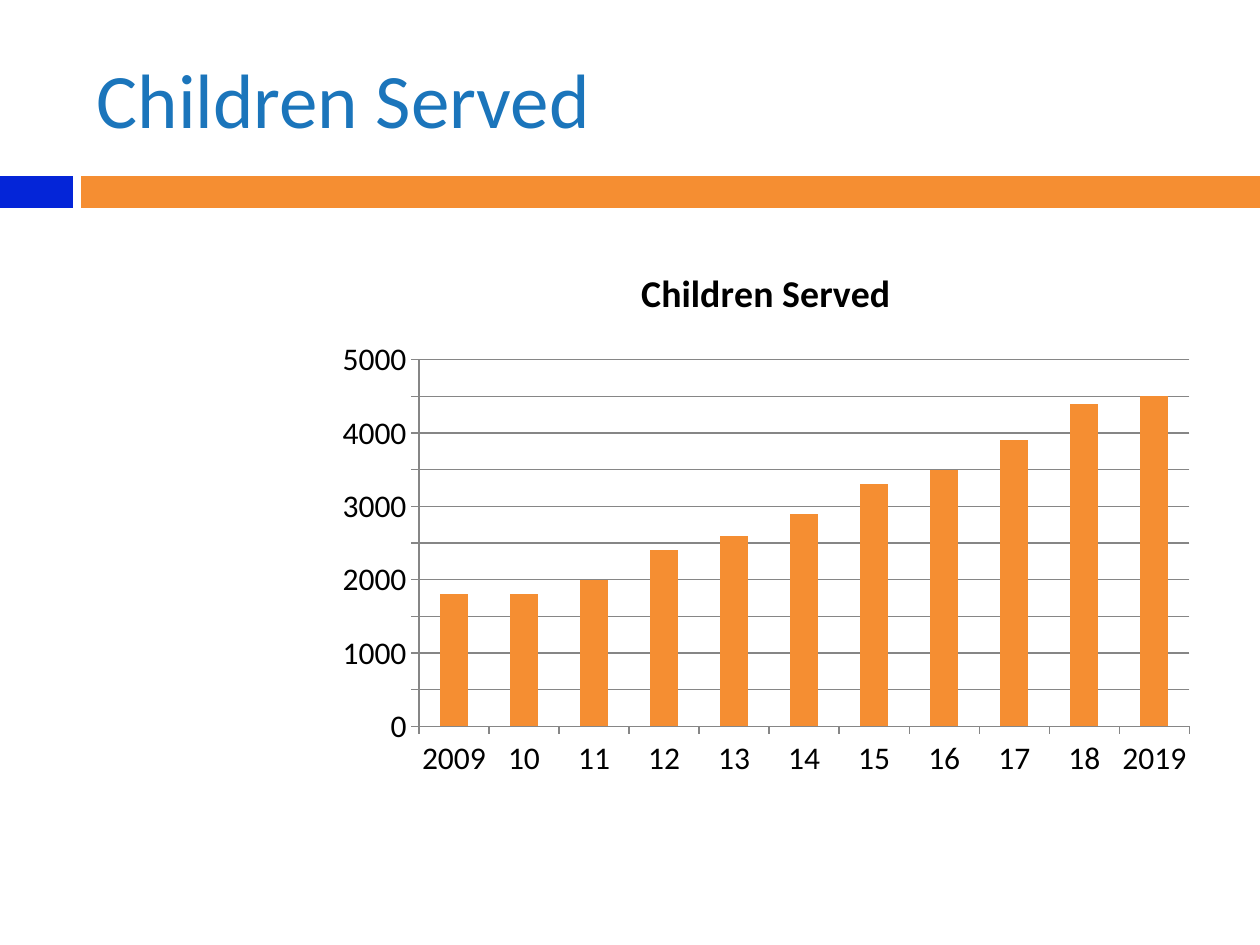
from pptx import Presentation
from pptx import util as u
from pptx.chart.data import CategoryChartData
from pptx.dml.color import RGBColor
from pptx.enum import chart as charts, shapes, text

# Content
HEADING = "Children Served"
SERVED = {
    "2009": 1800, "10": 1800, "11": 2000, "12": 2400, "13": 2600, "14": 2900,
    "15": 3300, "16": 3500, "17": 3900, "18": 4400, "2019": 4500,
}

# Style and places in px: left, top, width, height
FONT = "Calibri"
BLUE, ORANGE, TITLE_BLUE = "0425D8", "F58E32", "1B75BB"
BLACK, GREY = "000000", "868686"
PX = u.Inches(1) / 126
SLIDE_SIZE = (1260, 945)
TITLE_BOX = (84, 38, 1113, 120)
CHART_BOX = (325, 242, 882, 546)
BANDS = [((0, 176, 73, 32), BLUE), ((81, 176, 1179, 32), ORANGE)]


def emu(lengths):
    return [round(length * PX) for length in lengths]


def color(value):
    return RGBColor.from_string(value)


def style_font(font, size, value, bold=False):
    font.name, font.size, font.bold = FONT, u.Pt(size), bold
    font.color.rgb = color(value)


def style_line(line):
    line.color.rgb = color(GREY)
    line.width = u.Pt(0.75)


presentation = Presentation()
presentation.slide_width, presentation.slide_height = emu(SLIDE_SIZE)
slide = presentation.slides.add_slide(presentation.slide_layouts[5])

# Bands under the title
for box, fill in BANDS:
    band = slide.shapes.add_shape(shapes.MSO_SHAPE.RECTANGLE, *emu(box))
    band.shadow.inherit = False
    band.fill.solid()
    band.fill.fore_color.rgb = color(fill)
    band.line.fill.background()

# Title
title = slide.shapes.title
title.left, title.top, title.width, title.height = emu(TITLE_BOX)
title.text_frame.vertical_anchor = text.MSO_ANCHOR.MIDDLE
paragraph = title.text_frame.paragraphs[0]
paragraph.alignment = text.PP_ALIGN.LEFT
run = paragraph.add_run()
run.text = HEADING
style_font(run.font, 44, TITLE_BLUE)

# Column chart
data = CategoryChartData()
data.categories = list(SERVED)
data.add_series(HEADING, list(SERVED.values()))
chart = slide.shapes.add_chart(
    charts.XL_CHART_TYPE.COLUMN_CLUSTERED, *emu(CHART_BOX), data).chart
chart.has_legend = False
style_font(chart.font, 18, BLACK)

chart.has_title = True
run = chart.chart_title.text_frame.paragraphs[0].add_run()
run.text = HEADING
style_font(run.font, 21.6, BLACK, bold=True)
chart.chart_title.include_in_layout = False

plot = chart.plots[0]
plot.gap_width = 150
plot.vary_by_categories = False
columns = plot.series[0].format.fill
columns.solid()
columns.fore_color.rgb = color(ORANGE)

# Axes
for axis in (chart.category_axis, chart.value_axis):
    axis.major_tick_mark = charts.XL_TICK_MARK.OUTSIDE
    axis.minor_tick_mark = charts.XL_TICK_MARK.NONE
    style_line(axis.format.line)
values = chart.value_axis
values.minimum_scale, values.maximum_scale, values.major_unit = 0, 5000, 500
values.has_major_gridlines = True
style_line(values.major_gridlines.format.line)

presentation.save("out.pptx")
